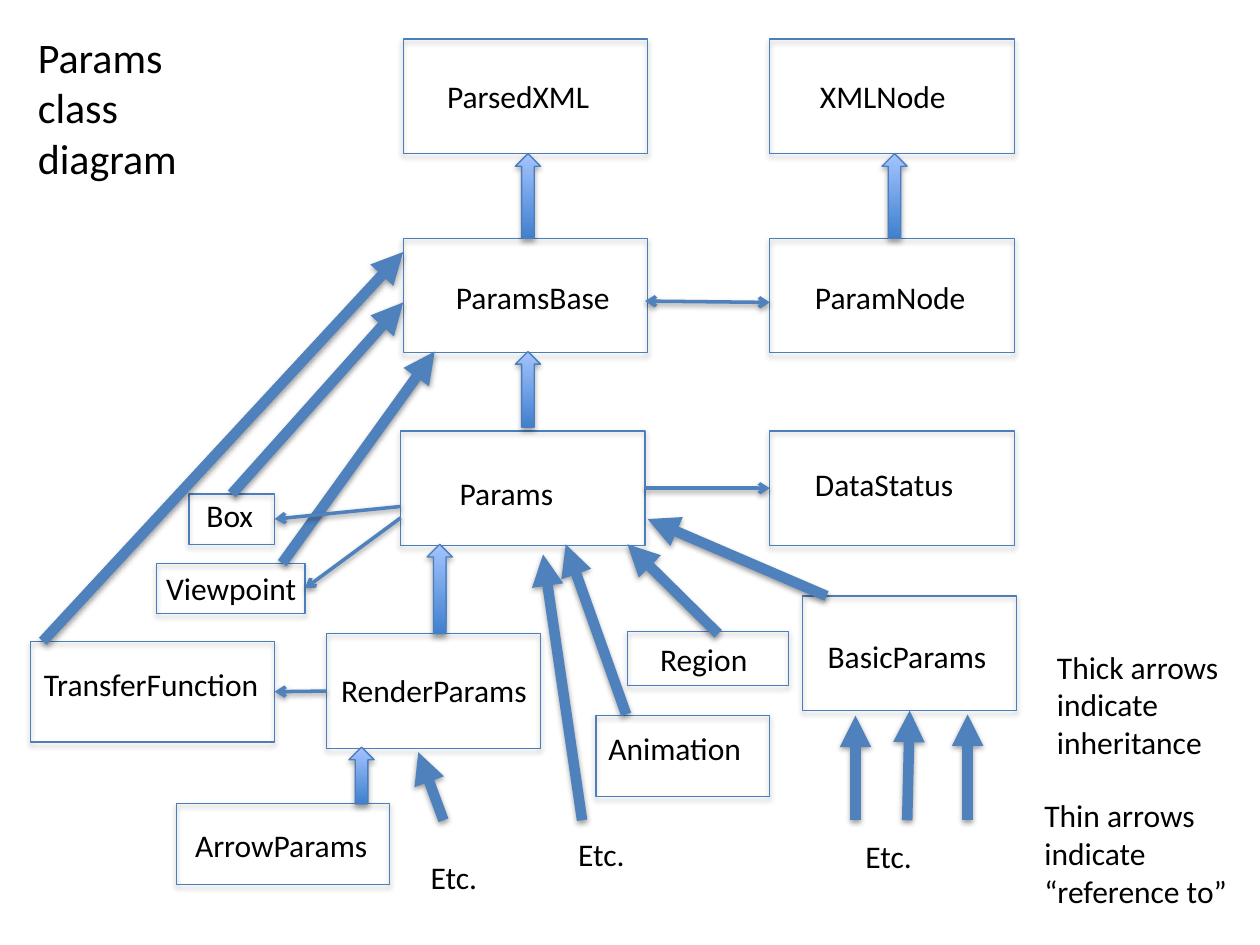
"""Build the Params class diagram slide."""
import pptx
import pptx.dml.color
import pptx.enum.shapes
import pptx.enum.text
import pptx.oxml
import pptx.oxml.ns
import pptx.util
from pptx.util import Inches

BLACK = pptx.dml.color.RGBColor(0x00, 0x00, 0x00)
OUTLINE = pptx.dml.color.RGBColor(0x4B, 0x7E, 0xBC)
ARROW = pptx.dml.color.RGBColor(0x4F, 0x81, 0xBD)
GRADIENT_DARK = pptx.dml.color.RGBColor(0x3F, 0x80, 0xCE)
GRADIENT_LIGHT = pptx.dml.color.RGBColor(0xA4, 0xC4, 0xFF)

CLASSES = {
    "ParsedXML": ((3.2, 0.31, 1.94, 0.91), (3.45, 0.56, 1.36)),
    "XMLNode": ((6.11, 0.31, 1.94, 0.91), (6.41, 0.56, 1.36)),
    "ParamsBase": ((3.2, 1.89, 1.94, 0.91), (3.52, 2.16, 1.57)),
    "ParamNode": ((6.11, 1.89, 1.94, 0.91), (6.37, 2.16, 1.57)),
    "Params": ((3.18, 3.42, 1.94, 0.91), (3.55, 3.71, 1.26)),
    "DataStatus": ((6.11, 3.42, 1.94, 0.91), (6.37, 3.64, 1.4)),
    "RenderParams": ((2.59, 5.03, 1.7, 0.91), (2.61, 5.28, 1.89)),
    "ArrowParams": ((1.4, 6.38, 1.69, 0.64), (1.45, 6.51, 1.63)),
    "TransferFunction": ((0.24, 5.09, 1.94, 0.8), (0.25, 5.23, 1.93)),
    "Box": ((1.5, 3.92, 0.68, 0.4), (1.54, 3.89, 0.73)),
    "Viewpoint": ((1.24, 4.47, 1.18, 0.4), (1.22, 4.47, 1.37)),
    "BasicParams": ((6.37, 4.73, 1.7, 0.91), (6.47, 5.01, 1.48)),
    "Region": ((4.98, 5.01, 1.28, 0.43), (5.14, 5.03, 1.13)),
    "Animation": ((4.73, 5.68, 1.38, 0.64), (4.73, 5.74, 1.39)),
}

BLOCK_ARROWS = [
    (4.09, 1.22, 0.67),
    (4.09, 2.79, 0.6),
    (3.39, 4.32, 0.71),
    (2.77, 5.93, 0.45),
    (7, 1.22, 0.67),
]

INHERITANCE = [
    ((0.34, 5.09), (3.2, 2)),
    ((2.24, 4.47), (3.45, 2.79)),
    ((1.84, 3.92), (3.2, 2.4), ("Box", 0)),
    ((6.56, 4.73), (5.14, 4.12)),
    ((5.7, 5.03), (4.98, 4.32)),
    ((4.97, 5.67), (4.49, 4.32)),
    ((7.68, 6.51), (7.68, 5.67)),
    ((7.2, 6.51), (7.22, 5.64), None, ("BasicParams", 2)),
    ((6.79, 6.51), (6.79, 5.68)),
    ((3.52, 6.51), (3.32, 5.97)),
    ((4.62, 6.51), (4.31, 4.4)),
]

REFERENCES = [
    ((5.12, 3.87), (6.11, 3.87), ("Params", 3), ("DataStatus", 1)),
    ((2.59, 5.48), (2.18, 5.48), ("RenderParams", 1), ("TransferFunction", 3)),
    ((3.18, 4.11), (2.42, 4.65), None, ("Viewpoint", 3)),
    ((3.18, 4.02), (2.18, 4.12), None, ("Box", 3)),
]

NOTES = [
    ("Thick arrows indicate inheritance", (8.29, 5.09, 1.56, 1.01)),
    ("Thin arrows indicate “reference to”", (8.19, 6.27, 1.81, 1.01)),
    ("Etc.", (3.32, 6.76, 0.77, 0.71)),
    ("Etc.", (4.49, 6.58, 0.77, 0.71)),
    ("Etc.", (6.77, 6.59, 0.77, 0.71)),
]


class Diagram:
    """Holds the style and the current slide."""

    font = "Calibri"

    def __init__(self, page):
        """Start a diagram on the page."""
        self.page = page
        self.boxes = {}

    def add_shadow(self, item, distance, opacity):
        """Give the item a soft shadow below it."""
        item._element.spPr.append(pptx.oxml.parse_xml(
            f'<a:effectLst {pptx.oxml.ns.nsdecls("a")}>'
            f'<a:outerShdw blurRad="40000" dist="{distance}" dir="5400000" rotWithShape="0">'
            f'<a:srgbClr val="000000"><a:alpha val="{opacity}"/></a:srgbClr>'
            '</a:outerShdw></a:effectLst>'))

    def set_text(self, frame, text, size):
        """Put black left-aligned text at the top of the frame."""
        frame.word_wrap = True
        frame.vertical_anchor = pptx.enum.text.MSO_ANCHOR.TOP
        frame.text = text
        para = frame.paragraphs[0]
        para.alignment = pptx.enum.text.PP_ALIGN.LEFT
        para.font.name = self.font
        para.font.size = pptx.util.Pt(size)
        para.font.color.rgb = BLACK

    def add_title(self, text, place):
        """Fill and move the title placeholder."""
        title = self.page.shapes.title
        title.left, title.top, title.width, title.height = map(Inches, place)
        title.text_frame.auto_size = pptx.enum.text.MSO_AUTO_SIZE.NONE
        self.set_text(title.text_frame, text, 24)

    def add_label(self, text, place):
        """Add a text box."""
        label = self.page.shapes.add_textbox(*map(Inches, place))
        self.set_text(label.text_frame, text, 18)

    def add_outlined(self, kind, place):
        """Add a preset shape with the thin outline and a shadow."""
        shape = self.page.shapes.add_shape(kind, *map(Inches, place))
        shape.line.color.rgb = OUTLINE
        shape.line.width = pptx.util.Pt(0.75)
        shape.fill.background()
        self.add_shadow(shape, 23000, 35000)
        return shape

    def add_class(self, name, place, label_place):
        """Add a class box and its name."""
        kind = pptx.enum.shapes.MSO_SHAPE.RECTANGLE
        self.boxes[name] = self.add_outlined(kind, place)
        self.add_label(name, (*label_place, 0.4))

    def add_block_arrow(self, left, top, height):
        """Add an upward block arrow with a gradient."""
        kind = pptx.enum.shapes.MSO_SHAPE.UP_ARROW
        arrow = self.add_outlined(kind, (left, top, 0.2, height))
        arrow.fill.gradient()
        arrow.fill.gradient_angle = 90
        stops = arrow.fill.gradient_stops
        for stop, position, color in zip(stops, (0, 1), (GRADIENT_DARK, GRADIENT_LIGHT)):
            stop.position = position
            stop.color.rgb = color

    def add_arrow(self, start, end, source=None, target=None, width=2, tip="arrow", both=False):
        """Add a line arrow, joined to class boxes where they are given."""
        kind = pptx.enum.shapes.MSO_CONNECTOR.STRAIGHT
        arrow = self.page.shapes.add_connector(kind, *map(Inches, start + end))
        if source:
            arrow.begin_connect(self.boxes[source[0]], source[1])
        if target:
            arrow.end_connect(self.boxes[target[0]], target[1])
        arrow.line.color.rgb = ARROW
        arrow.line.width = pptx.util.Pt(width)
        outline = arrow._element.spPr.find(pptx.oxml.ns.qn("a:ln"))
        for side in ("headEnd", "tailEnd") if both else ("tailEnd",):
            outline.append(pptx.oxml.parse_xml(
                f'<a:{side} {pptx.oxml.ns.nsdecls("a")} type="{tip}"/>'))
        self.add_shadow(arrow, 20000, 38000)


def main():
    """Build and save the deck."""
    deck = pptx.Presentation()
    deck.slide_width, deck.slide_height = Inches(10), Inches(7.5)
    diagram = Diagram(deck.slides.add_slide(deck.slide_layouts[5]))
    diagram.add_title("Params class diagram", (0.2, 0.2, 1.7, 1.31))
    for name, (place, label_place) in CLASSES.items():
        diagram.add_class(name, place, label_place)
    for left, top, height in BLOCK_ARROWS:
        diagram.add_block_arrow(left, top, height)
    for link in INHERITANCE:
        diagram.add_arrow(*link, width=6, tip="triangle")
    for link in REFERENCES:
        diagram.add_arrow(*link)
    diagram.add_arrow((5.12, 2.39), (6.11, 2.4), both=True)
    for text, place in NOTES:
        diagram.add_label(text, place)
    deck.save("out.pptx")


if __name__ == "__main__":
    main()
